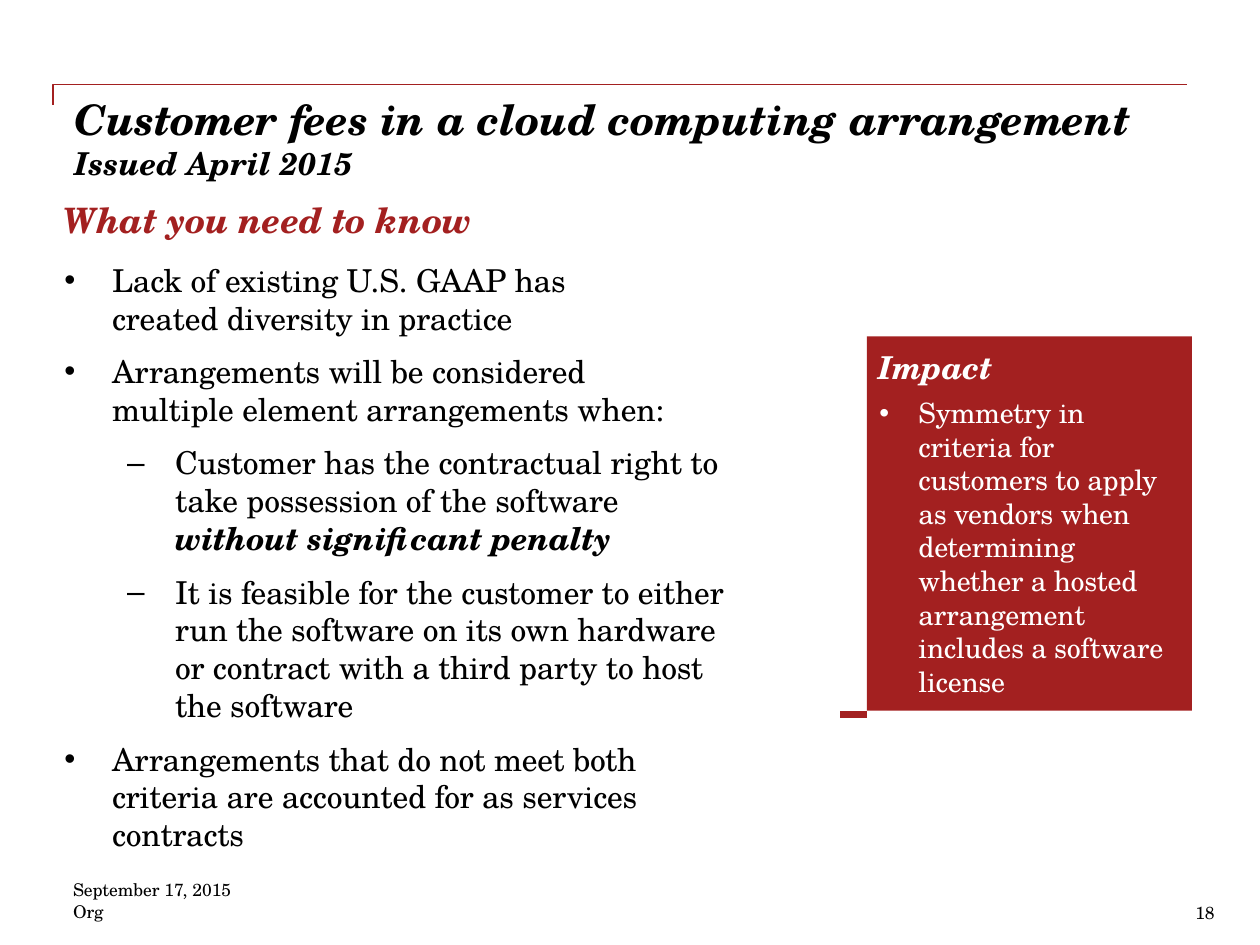
from lxml import etree
from pptx import Presentation
from pptx.dml.color import RGBColor
from pptx.enum.shapes import MSO_CONNECTOR as Connector, MSO_SHAPE as Shape
from pptx.enum.text import MSO_ANCHOR as Anchor, PP_ALIGN as Align
from pptx.oxml.ns import qn
from pptx.util import Inches, Pt

FONT = "TeX Gyre Schola"
COLORS = {"red": "A32020", "black": "000000", "white": "FFFFFF"}

# Content: each paragraph is a list of (text, emphasised) runs
TITLE = [[("Customer fees in a cloud computing arrangement", True)]]
ISSUED = [("Issued April 2015", True)]
HEADING = [("What you need to know", True)]
OPENING_POINTS = [
    [("Lack of existing U.S. GAAP has created diversity in practice", False)],
    [("Arrangements will be considered multiple element arrangements when:", False)],
]
CRITERIA = [
    [("Customer has the contractual right to take possession of the software ", False),
     ("without significant penalty", True)],
    [("It is feasible for the customer to either run the software on its own "
      "hardware or contract with a third party to host the software", False)],
]
CLOSING_POINT = [[("Arrangements that do not meet both criteria are accounted "
                   "for as services contracts", False)]]
IMPACT_TITLE = [[("Impact", True)]]
IMPACT_POINT = [[("Symmetry in criteria for customers to apply as vendors when "
                  "determining whether a hosted arrangement includes a software "
                  "license", False)]]
FOOTER = [[("September 17, 2015", False)], [("Org", False)]]
PAGE_NUMBER = [[("18", False)]]


def rgb(name):
    return RGBColor.from_string(COLORS[name])


def prepare_frame(frame):
    frame.word_wrap = True
    frame.vertical_anchor = Anchor.TOP
    frame.margin_left = frame.margin_right = 0
    frame.margin_top = frame.margin_bottom = 0


def write_paragraph(paragraph, content, size, color="black", bullet=None,
                    indent=0, hanging=0, gap=0, align=Align.LEFT, tracking=0):
    paragraph.alignment = align
    paragraph.space_before = Pt(gap)
    properties = paragraph._p.get_or_add_pPr()
    properties.set("marL", str(Inches(indent)))
    properties.set("indent", str(-Inches(hanging)))
    if bullet:
        etree.SubElement(properties, qn("a:buFont"), typeface="Arial")
        etree.SubElement(properties, qn("a:buChar"), char=bullet)
    for text, emphasised in content:
        run = paragraph.add_run()
        run.text = text
        font = run.font
        font.name, font.size = FONT, Pt(size)
        font.bold = font.italic = emphasised
        font.color.rgb = rgb(color)
        if tracking:
            run._r.get_or_add_rPr().set("spc", str(tracking))


def write_text(frame, paragraphs, size, gap=0, **style):
    prepare_frame(frame)
    for i, content in enumerate(paragraphs):
        paragraph = frame.add_paragraph() if i else frame.paragraphs[0]
        write_paragraph(paragraph, content, size, gap=gap if i else 0, **style)


def add_frame(slide, left, top, width, height):
    box = slide.shapes.add_textbox(*map(Inches, (left, top, width, height)))
    return box.text_frame


def main():
    prs = Presentation()
    prs.slide_width, prs.slide_height = Inches(10), Inches(7.5)
    slide = prs.slides.add_slide(prs.slide_layouts[5])
    shapes = slide.shapes

    # Corner rule above the title
    builder = shapes.build_freeform(Inches(0.42), Inches(0.83))
    builder.add_line_segments([(Inches(0.42), Inches(0.67)),
                               (Inches(9.42), Inches(0.67))], close=False)
    rule = builder.convert_to_shape()
    rule.shadow.inherit = False
    rule.fill.background()
    rule.line.color.rgb = rgb("red")
    rule.line.width = Pt(1)

    # Title
    title = shapes.title
    title.left, title.top = Inches(0.52), Inches(0.74)
    title.width, title.height = Inches(8.97), Inches(0.41)
    write_text(title.text_frame, TITLE, 24, indent=0.07, tracking=-5)

    # Issue date and section heading
    intro = add_frame(slide, 0.49, 1.14, 3.45, 1.17)
    prepare_frame(intro)
    write_paragraph(intro.paragraphs[0], ISSUED, 18, indent=0.1)
    write_paragraph(intro.add_paragraph(), HEADING, 20, color="red",
                    indent=0.01, gap=10, tracking=-5)

    # Bulleted body
    for place, points, bullet in [
        ((0.5, 2.07, 4.85, 1.34), OPENING_POINTS, "•"),
        ((1, 3.52, 4.9, 2.24), CRITERIA, "–"),
        ((0.5, 5.87, 5.22, 0.61), CLOSING_POINT, "•"),
    ]:
        write_text(add_frame(slide, *place), points, 18, gap=9, bullet=bullet,
                   indent=0.39, hanging=0.38, tracking=-10)

    # Impact panel
    panel = shapes.add_shape(Shape.RECTANGLE, Inches(6.88), Inches(2.67),
                             Inches(2.58), Inches(2.97))
    panel.shadow.inherit = False
    panel.fill.solid()
    panel.fill.fore_color.rgb = rgb("red")
    panel.line.fill.background()
    write_text(add_frame(slide, 6.96, 2.76, 0.96, 0.31), IMPACT_TITLE, 18,
               color="white", indent=0.01, tracking=-5)
    write_text(add_frame(slide, 6.96, 3.14, 2.33, 2.15), IMPACT_POINT, 16,
               color="white", bullet="•", indent=0.33, hanging=0.31, tracking=-12)

    # Accent at the panel's lower left corner
    accent = shapes.add_connector(Connector.STRAIGHT, Inches(6.67), Inches(5.67),
                                  Inches(6.88), Inches(5.67))
    accent.line.color.rgb = rgb("red")
    accent.line.width = Pt(4.18)
    etree.SubElement(accent._element.spPr, qn("a:effectLst"))

    # Footer
    write_text(add_frame(slide, 0.58, 6.98, 2.83, 0.42), FOOTER, 10)
    write_text(add_frame(slide, 7.97, 7.16, 1.67, 0.17), PAGE_NUMBER, 10,
               align=Align.RIGHT)

    prs.save("out.pptx")


if __name__ == "__main__":
    main()
